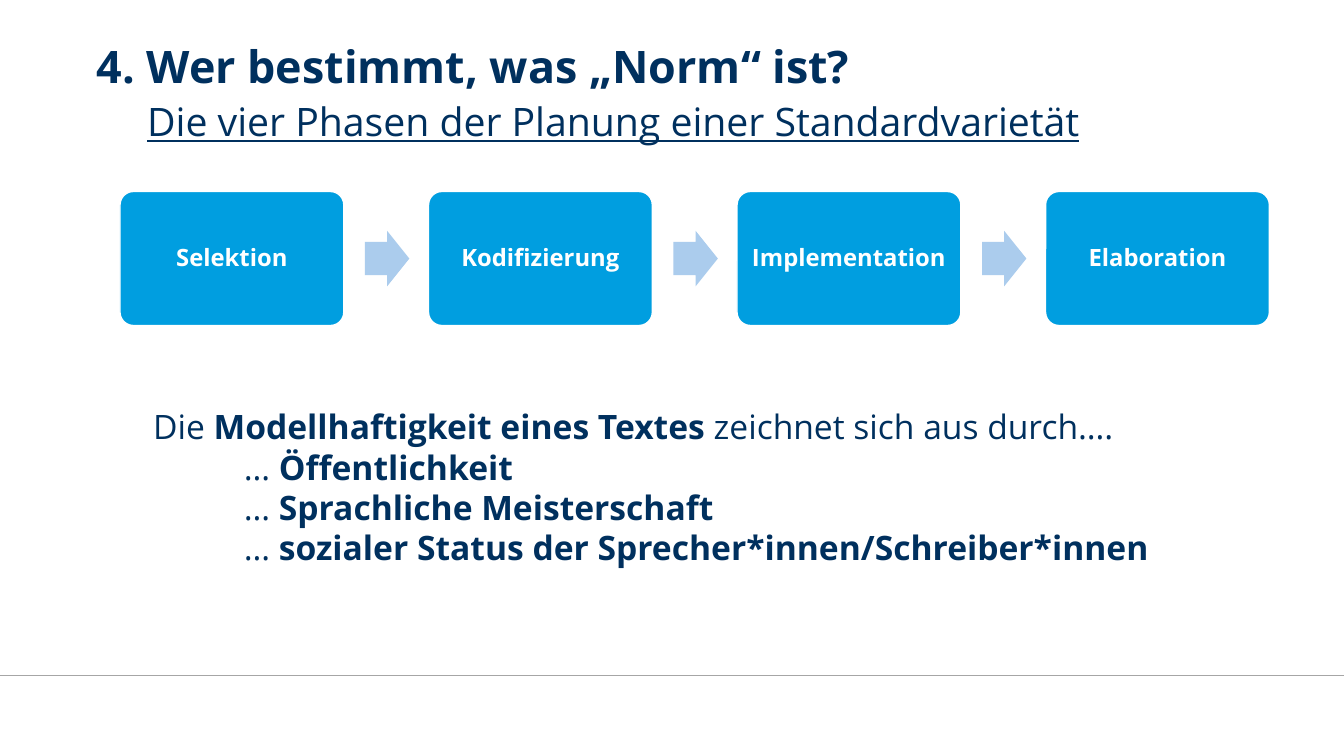
from pptx import Presentation
from pptx.dml.color import RGBColor
from pptx.enum.shapes import MSO_CONNECTOR, MSO_SHAPE
from pptx.enum.text import MSO_ANCHOR, MSO_AUTO_SIZE, PP_ALIGN
from pptx.oxml.ns import qn
from pptx.util import Inches, Pt

STRAIGHT = MSO_CONNECTOR.STRAIGHT
ROUNDED = MSO_SHAPE.ROUNDED_RECTANGLE
ARROW = MSO_SHAPE.RIGHT_ARROW
TOP, MIDDLE = MSO_ANCHOR.TOP, MSO_ANCHOR.MIDDLE
LEFT, CENTER = PP_ALIGN.LEFT, PP_ALIGN.CENTER
NO_AUTOFIT = MSO_AUTO_SIZE.NONE

NAVY = RGBColor(0x00, 0x30, 0x5E)
BLUE = RGBColor(0x00, 0x9E, 0xE0)
PALE_BLUE = RGBColor(0xAB, 0xCC, 0xED)
GRAY = RGBColor(0xA6, 0xA6, 0xA6)
WHITE = RGBColor(0xFF, 0xFF, 0xFF)

PHASES = ["Selektion", "Kodifizierung", "Implementation", "Elaboration"]
CRITERIA = [
    "Öffentlichkeit",
    "Sprachliche Meisterschaft",
    "sozialer Status der Sprecher*innen/Schreiber*innen",
]


class SlideBuilder:
    font_name = "Open Sans"

    def __init__(self, slide):
        self.slide = slide

    def run(self, paragraph, text, size, bold=False, color=NAVY, underline=False):
        run = paragraph.add_run()
        run.text = text
        font = run.font
        font.name = self.font_name
        font.size = Pt(size)
        font.bold = bold
        font.underline = underline
        font.color.rgb = color

    def frame(self, shape, anchor, margin_x=0, margin_y=0):
        frame = shape.text_frame
        frame.word_wrap = True
        frame.auto_size = NO_AUTOFIT
        frame.vertical_anchor = anchor
        frame.margin_left = frame.margin_right = Inches(margin_x)
        frame.margin_top = frame.margin_bottom = Inches(margin_y)
        return frame

    def title(self, heading, subtitle, left, top, width, height):
        shape = self.slide.shapes.title
        shape.left, shape.top = Inches(left), Inches(top)
        shape.width, shape.height = Inches(width), Inches(height)
        paragraph = self.frame(shape, TOP).paragraphs[0]
        paragraph.alignment = LEFT
        self.run(paragraph, heading, 32, bold=True)
        paragraph.add_line_break()
        self.run(paragraph, "\t", 32, bold=True)
        self.run(paragraph, subtitle, 28, underline=True)

    def rule(self, top, width):
        line = self.slide.shapes.add_connector(
            STRAIGHT, 0, Inches(top), Inches(width), Inches(top))
        line.line.color.rgb = GRAY
        line.line.width = Pt(1)
        properties = line._element.spPr
        properties.append(properties.makeelement(qn("a:effectLst"), {}))

    def shape(self, kind, left, top, width, height, fill, adjustments):
        shape = self.slide.shapes.add_shape(
            kind, Inches(left), Inches(top), Inches(width), Inches(height))
        shape.shadow.inherit = False
        shape.fill.solid()
        shape.fill.fore_color.rgb = fill
        shape.line.fill.background()
        for index, value in enumerate(adjustments):
            shape.adjustments[index] = value
        return shape

    def phase(self, label, left):
        box = self.shape(ROUNDED, left, 1.9, 2.22, 1.33, BLUE, [0.1])
        box.line.color.rgb = WHITE
        box.line.width = Pt(1)
        paragraph = self.frame(box, MIDDLE, 0.1, 0.1).paragraphs[0]
        paragraph.alignment = CENTER
        paragraph.line_spacing = 0.9
        self.run(paragraph, label, 17, bold=True, color=WHITE)

    def arrow(self, left):
        self.shape(ARROW, left, 2.29, 0.44, 0.55, PALE_BLUE, [0.6, 0.5])

    def text(self, lines, left, top, width, height):
        box = self.slide.shapes.add_textbox(
            Inches(left), Inches(top), Inches(width), Inches(height))
        frame = self.frame(box, TOP, 0.1, 0.05)
        for index, (indent, runs) in enumerate(lines):
            paragraph = frame.add_paragraph() if index else frame.paragraphs[0]
            paragraph._p.get_or_add_pPr().set("marL", str(Inches(indent)))
            for text, bold in runs:
                self.run(paragraph, text, 24, bold=bold)


def main():
    presentation = Presentation()
    presentation.slide_width = Inches(13.33)
    presentation.slide_height = Inches(7.5)
    slide = presentation.slides.add_slide(presentation.slide_layouts[5])
    builder = SlideBuilder(slide)

    builder.rule(6.7, 13.33)
    builder.title("4. Wer bestimmt, was „Norm“ ist?",
                  "Die vier Phasen der Planung einer Standardvarietät",
                  0.96, 0.38, 11.57, 0.75)

    for index, label in enumerate(PHASES):
        left = 1.19 + index * 3.06
        builder.phase(label, left)
        if index < len(PHASES) - 1:
            builder.arrow(left + 2.43)

    lines = [(0, [("Die ", False), ("Modellhaftigkeit eines Textes", True),
                  (" zeichnet sich aus durch….", False)])]
    lines += [(0.9, [("… ", False), (criterion, True)]) for criterion in CRITERIA]
    builder.text(lines, 1.42, 3.98, 10.8, 1.72)

    presentation.save("out.pptx")


if __name__ == "__main__":
    main()
